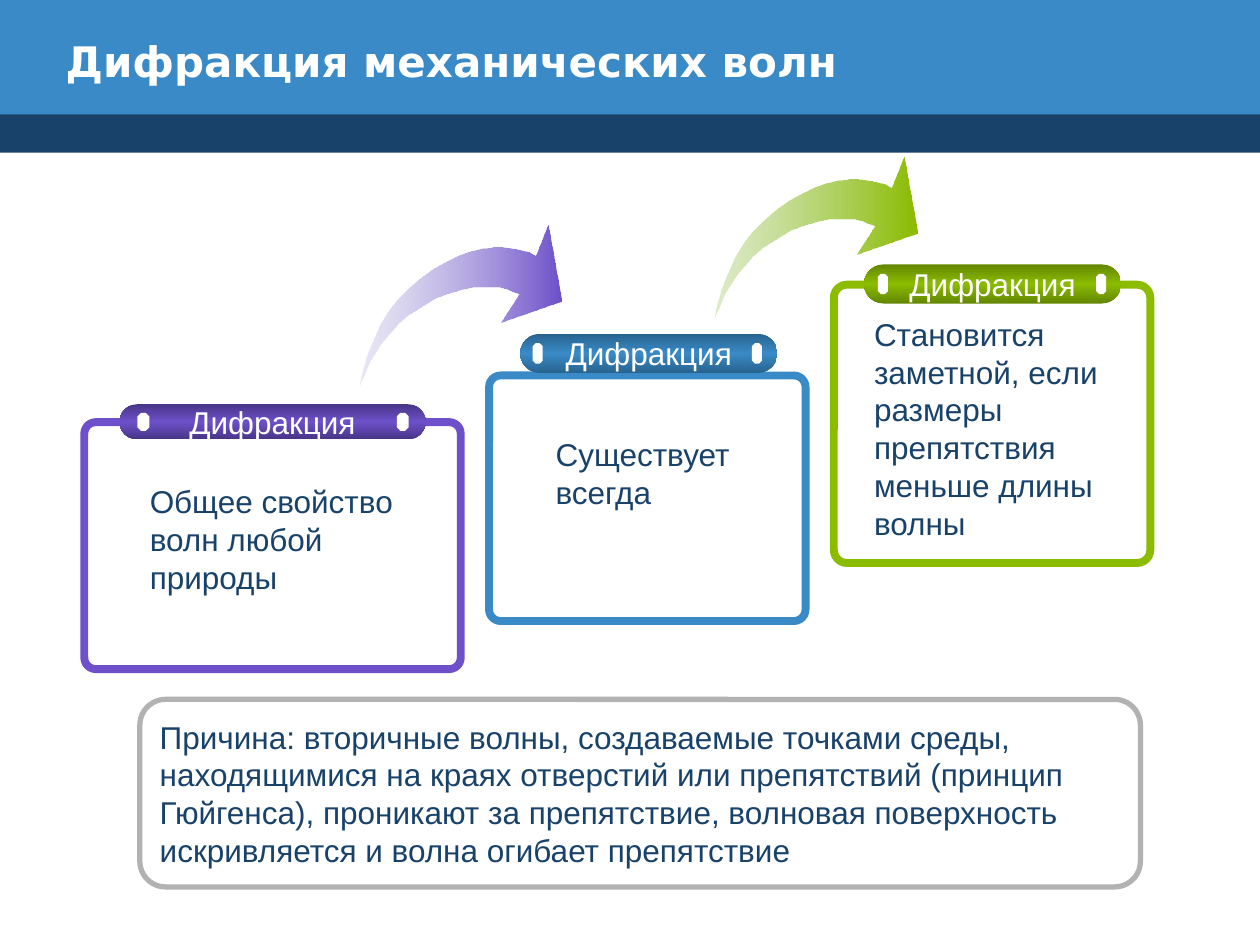
from lxml.etree import SubElement
from pptx import Presentation
from pptx.dml.color import RGBColor
from pptx.enum.shapes import MSO_SHAPE
from pptx.enum.text import MSO_ANCHOR, MSO_AUTO_SIZE, PP_ALIGN
from pptx.oxml.ns import qn
from pptx.util import Cm, Pt

WHITE = RGBColor(0xFF, 0xFF, 0xFF)
NAVY = RGBColor(0x19, 0x42, 0x6B)
BLUE = RGBColor(0x39, 0x8A, 0xC7)
BLUE_DARK = RGBColor(0x29, 0x63, 0x8E)
GREEN = RGBColor(0x8B, 0xBC, 0x00)
GREEN_DARK = RGBColor(0x63, 0x86, 0x00)
GREEN_PALE = RGBColor(0x9A, 0xC3, 0x5A)
PURPLE = RGBColor(0x6D, 0x50, 0xCA)
PURPLE_DARK = RGBColor(0x48, 0x35, 0x86)
PURPLE_PALE = RGBColor(0xBD, 0xB7, 0xE2)
GREY = RGBColor(0xB2, 0xB2, 0xB2)

# Curved arrow outline in hundredths of an inch, from its top left corner
ARROW = [
    (0, 127), (1, 124), (3, 120), (5, 115), (8, 108), (12, 102), (17, 94),
    (23, 87), (30, 79), (38, 72), (48, 66), (59, 59), (70, 55), (80, 52),
    (89, 50), (97, 50), (104, 50), (111, 50), (116, 51), (120, 53), (126, 55),
    (111, 78), (160, 61), (149, 0), (139, 25), (134, 22), (130, 21), (125, 20),
    (120, 19), (113, 18), (105, 18), (97, 19), (88, 21), (79, 24), (69, 29),
    (58, 35), (47, 43), (38, 51), (29, 60), (22, 69), (16, 79), (12, 88),
    (8, 97), (5, 105), (3, 112), (1, 119), (0, 126),
]


def add_shape(kind, box, fill=None, line=None, width=0, adj=None):
    sp = s.shapes.add_shape(kind, *[Cm(v) for v in box])
    sp.shadow.inherit = False
    if adj is not None:
        sp.adjustments[0] = adj
    if fill is None:
        sp.fill.background()
    else:
        sp.fill.solid()
        sp.fill.fore_color.rgb = fill
    if line is None:
        sp.line.fill.background()
    else:
        sp.line.color.rgb = line
        sp.line.width = Pt(width)
    return sp


def set_gradient(sp, angle, stops):
    """Fill with stops given as (position %, colour, opacity %)."""
    sp.fill.gradient()
    sp.fill.gradient_angle = angle
    gs_lst = sp._element.spPr.find(qn("a:gradFill")).find(qn("a:gsLst"))
    for gs in list(gs_lst):
        gs_lst.remove(gs)
    for pos, color, opacity in stops:
        gs = SubElement(gs_lst, qn("a:gs"), pos=str(pos * 1000))
        clr = SubElement(gs, qn("a:srgbClr"), val=str(color))
        if opacity < 100:
            SubElement(clr, qn("a:alpha"), val=str(opacity * 1000))


prs = Presentation()
prs.slide_width, prs.slide_height = Cm(25.4), Cm(19.05)
s = prs.slides.add_slide(prs.slide_layouts[5])

# Header bands
add_shape(MSO_SHAPE.RECTANGLE, (0, 2.21, 25.4, 0.87), NAVY)
add_shape(MSO_SHAPE.RECTANGLE, (0, 0, 25.4, 2.31), BLUE)

# Title, raised above the bands
title = s.shapes.title
s.shapes._spTree.append(title._element)
title.left, title.top, title.width, title.height = Cm(1.07), Cm(0.43), Cm(20.52), Cm(1.57)
tf = title.text_frame
tf.vertical_anchor = MSO_ANCHOR.MIDDLE
p = tf.paragraphs[0]
p.alignment = PP_ALIGN.LEFT
r = p.add_run()
r.text = "Дифракция механических волн"
r.font.size, r.font.bold, r.font.name = Pt(24), True, "DejaVu Sans"
r.font.color.rgb = WHITE

# Arrows between the cards
for left, top, pale, color in [
    (14.43, 3.15, GREEN_PALE, GREEN),
    (7.26, 4.52, PURPLE_PALE, PURPLE),
]:
    builder = s.shapes.build_freeform(*ARROW[0], scale=Cm(0.0254))
    builder.add_line_segments(ARROW[1:], close=True)
    sp = builder.convert_to_shape()
    sp.left, sp.top = Cm(left), Cm(top)
    sp.shadow.inherit = False
    sp.line.fill.background()
    set_gradient(sp, 0, [(0, pale, 32), (100, color, 100)])

# Cards: frame, label pill, stud size and places, body text
cards = [
    (BLUE, BLUE_DARK, (9.86, 7.57, 6.38, 4.95), (10.49, 6.73, 5.18, 0.79),
     (0.2, 0.41), (10.74, 15.16), (10.95, 8.64, 4.47, 1.78),
     "Существует всегда"),
    (GREEN, GREEN_DARK, (16.81, 5.74, 6.38, 5.61), (17.42, 5.33, 5.18, 0.79),
     (0.2, 0.41), (17.7, 22.1), (17.37, 6.22, 5.13, 4.83),
     "Становится заметной, если размеры препятствия меньше длины волны"),
    (PURPLE, PURPLE_DARK, (1.7, 8.51, 7.59, 4.98), (2.41, 8.15, 6.17, 0.71),
     (0.24, 0.36), (2.77, 8), (2.77, 9.6, 5.72, 2.54),
     "Общее свойство волн любой природы"),
]
for color, dark, frame, pill, stud, stud_xs, body, text in cards:
    add_shape(MSO_SHAPE.ROUNDED_RECTANGLE, frame, line=color, width=4.5, adj=0.047)

    sp = add_shape(MSO_SHAPE.ROUNDED_RECTANGLE, pill, adj=0.5)
    set_gradient(sp, 90, [(0, dark, 100), (50, color, 100), (100, dark, 100)])
    tf = sp.text_frame
    tf.word_wrap = False
    tf.vertical_anchor = MSO_ANCHOR.MIDDLE
    p = tf.paragraphs[0]
    p.alignment = PP_ALIGN.CENTER
    r = p.add_run()
    r.text = "Дифракция"
    r.font.size, r.font.name = Pt(18), "Arial"
    r.font.color.rgb = WHITE

    stud_y = pill[1] + (pill[3] - stud[1]) / 2
    for x in stud_xs:
        add_shape(MSO_SHAPE.OCTAGON, (x, stud_y, *stud), WHITE, adj=0.293)

    tf = s.shapes.add_textbox(*[Cm(v) for v in body]).text_frame
    tf.word_wrap = True
    tf.auto_size = MSO_AUTO_SIZE.SHAPE_TO_FIT_TEXT
    r = tf.paragraphs[0].add_run()
    r.text = text
    r.font.size, r.font.name = Pt(18), "Arial"
    r.font.color.rgb = NAVY

# Explanation at the bottom
sp = add_shape(MSO_SHAPE.ROUNDED_RECTANGLE, (2.82, 14.1, 20.17, 3.78),
               line=GREY, width=3, adj=0.137)
tf = sp.text_frame
tf.word_wrap = True
tf.vertical_anchor = MSO_ANCHOR.MIDDLE
p = tf.paragraphs[0]
p.alignment = PP_ALIGN.LEFT
r = p.add_run()
r.text = ("Причина: вторичные волны, создаваемые точками среды, находящимися "
          "на краях отверстий или препятствий (принцип Гюйгенса), проникают за "
          "препятствие, волновая поверхность искривляется и волна огибает препятствие")
r.font.size, r.font.name = Pt(18), "Arial"
r.font.color.rgb = NAVY

prs.save("out.pptx")
